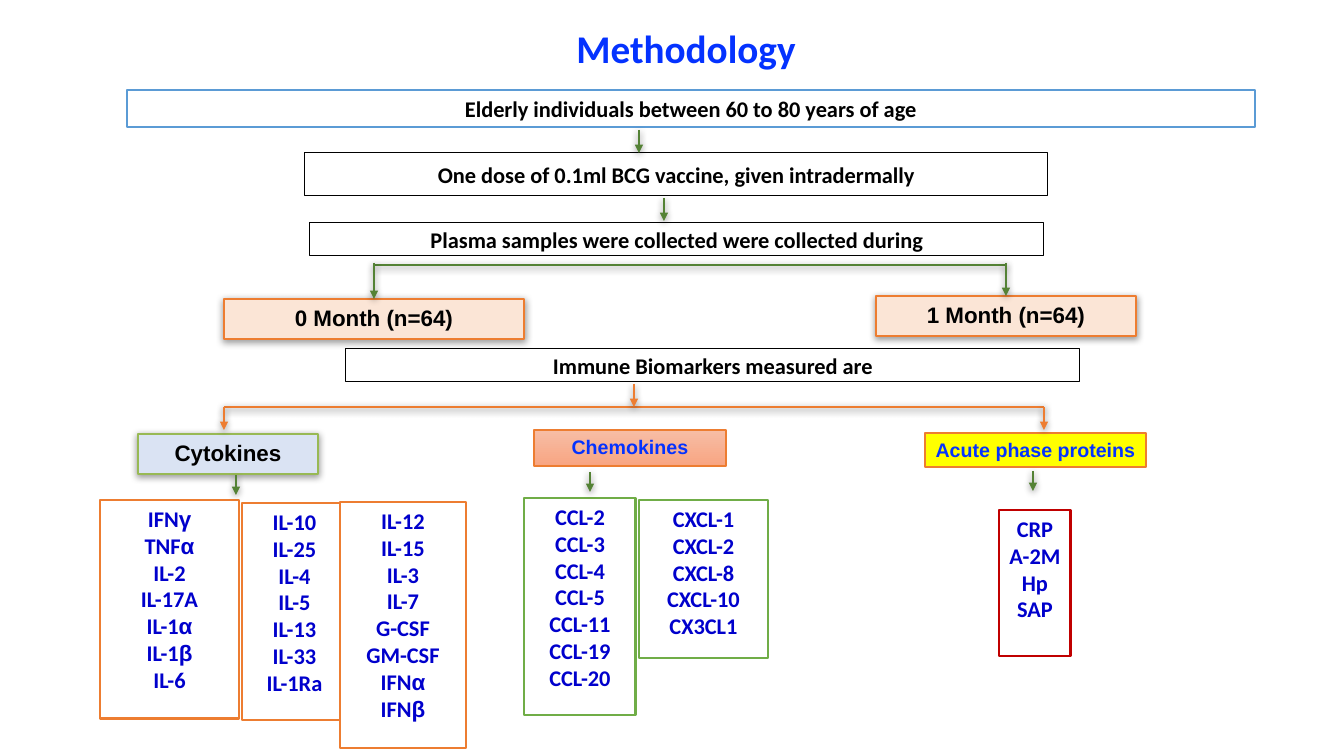
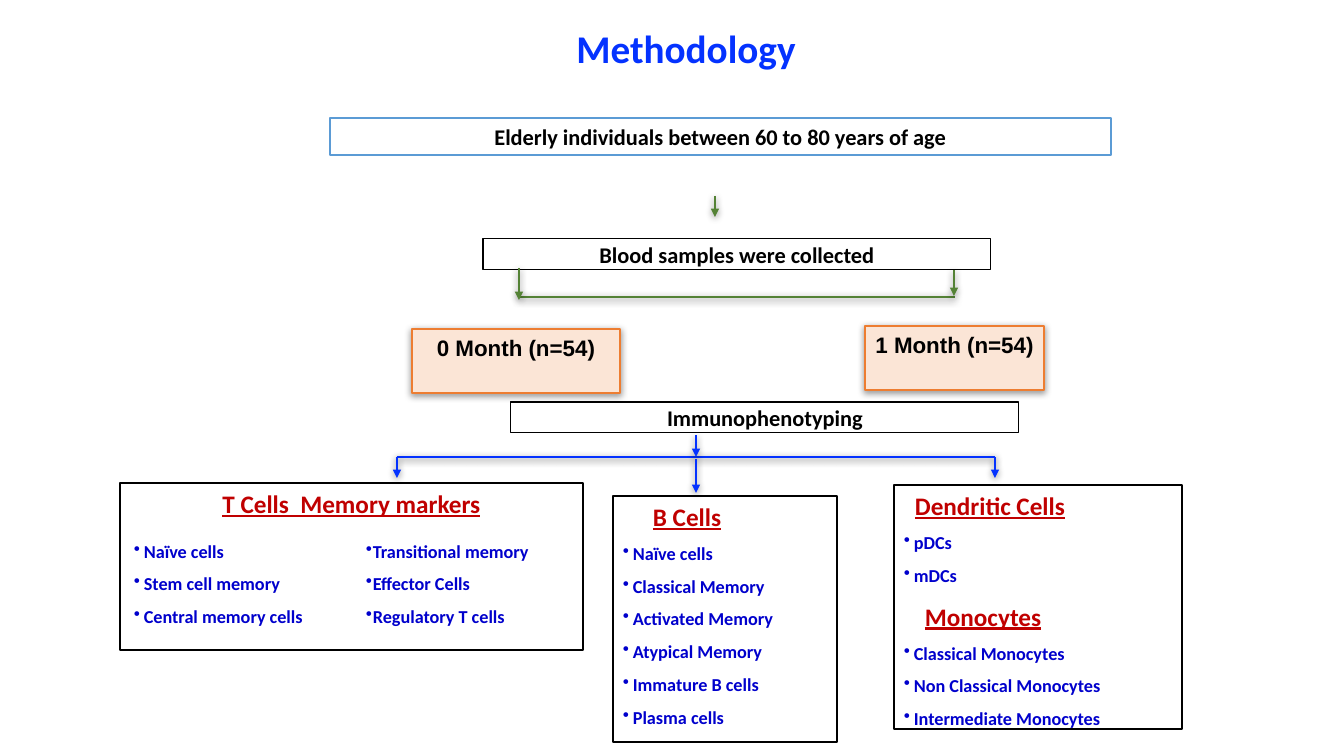
"""Build two methodology flow chart slides for a vaccine study."""
from dataclasses import dataclass
from itertools import groupby

from lxml import etree
from pptx import Presentation
from pptx.dml.color import RGBColor
from pptx.enum.shapes import MSO_CONNECTOR, MSO_SHAPE
from pptx.enum.text import MSO_ANCHOR, PP_ALIGN
from pptx.oxml.ns import qn
from pptx.util import Emu, Pt

RECTANGLE = MSO_SHAPE.RECTANGLE
STRAIGHT = MSO_CONNECTOR.STRAIGHT
TOP, MIDDLE = MSO_ANCHOR.TOP, MSO_ANCHOR.MIDDLE
CENTER, LEFT = PP_ALIGN.CENTER, PP_ALIGN.LEFT
SCALE = 914400 / 100.8
TOP_SIDE = 0


@dataclass(frozen=True)
class Theme:
    black: str = "000000"
    white: str = "FFFFFF"
    blue: str = "0432FF"
    navy: str = "0000CC"
    red: str = "C00000"
    sky: str = "5B9BD5"
    orange: str = "ED7D31"
    peach: str = "FBE5D6"
    green: str = "70AD47"
    dark_green: str = "548235"
    olive: str = "98B954"
    pale_blue: str = "DAE3F3"
    yellow: str = "FFFF00"
    salmon: tuple = ("F7BDA5", "F8A582")
    body: str = "Calibri"
    label: str = "Arial"
    title_size: int = 28
    heading_size: int = 18
    text_size: int = 16
    label_size: int = 14
    bullet_size: int = 13


theme = Theme()


def add_box(page, place, text, *, fill=None, line=None, weight=1, font=theme.body,
            size=theme.text_size, color=theme.black, anchor=TOP, shadow=False,
            spacing=None, bullet=0, headings=None):
    left, top, width, height = (Emu(round(value * SCALE)) for value in place)
    if line:
        box = page.shapes.add_shape(RECTANGLE, left, top, width, height)
        box.shadow.inherit = False
        box.line.color.rgb = RGBColor.from_string(line)
        box.line.width = Pt(weight)
        if isinstance(fill, tuple):
            box.fill.gradient()
            box.fill.gradient_angle = 270
            for stop, shade in zip(box.fill.gradient_stops, fill):
                stop.color.rgb = RGBColor.from_string(shade)
        elif fill:
            box.fill.solid()
            box.fill.fore_color.rgb = RGBColor.from_string(fill)
        else:
            box.fill.background()
    else:
        box = page.shapes.add_textbox(left, top, width, height)
    if shadow:
        effects = box.element.spPr.find(qn("a:effectLst"))
        outer = etree.SubElement(effects, qn("a:outerShdw"), blurRad="63500",
                                 dist="20320", dir="5400000", rotWithShape="0")
        shade = etree.SubElement(outer, qn("a:srgbClr"), val=theme.black)
        etree.SubElement(shade, qn("a:alpha"), val="38000")
    frame = box.text_frame
    frame.word_wrap = bool(bullet)
    frame.vertical_anchor = anchor
    for index, words in enumerate(text.split("\n")):
        para = frame.paragraphs[0] if index == 0 else frame.add_paragraph()
        para.alignment = LEFT if bullet else CENTER
        heading = words in (headings or {})
        properties = para._p.get_or_add_pPr()
        if heading:
            properties.set("marL", str(round(headings[words] * SCALE)))
        elif bullet:
            properties.set("marL", str(round(bullet * SCALE)))
            properties.set("indent", str(-round(bullet * SCALE)))
            etree.SubElement(properties, qn("a:buChar"), char="•")
        if spacing and not (heading and index == 0):
            para.line_spacing = spacing
        for greek, letters in groupby(words, key=lambda letter: letter in "αβγ"):
            span = para.add_run()
            span.text = "".join(letters)
            span.font.name = theme.label if greek else font
            span.font.size = Pt(theme.heading_size if heading else size)
            span.font.bold = True
            span.font.underline = True if heading else None
            span.font.color.rgb = RGBColor.from_string(theme.red if heading else color)
    return box


def add_line(page, ends, color, arrow=True, target=None):
    connector = page.shapes.add_connector(
        STRAIGHT, *(Emu(round(value * SCALE)) for value in ends))
    if target is not None:
        connector.end_connect(target, TOP_SIDE)
    connector.line.color.rgb = RGBColor.from_string(color)
    connector.line.width = Pt(2)
    if arrow:
        etree.SubElement(connector.line._get_or_add_ln(), qn("a:tailEnd"), type="triangle")
    effects = etree.SubElement(connector._element.spPr, qn("a:effectLst"))
    outer = etree.SubElement(effects, qn("a:outerShdw"), blurRad="63500",
                             dist="20320", dir="5400000", rotWithShape="0")
    shade = etree.SubElement(outer, qn("a:srgbClr"), val=theme.black)
    etree.SubElement(shade, qn("a:alpha"), val="38000")


deck = Presentation()
deck.slide_width = Emu(round(1344 * SCALE))
deck.slide_height = Emu(round(756 * SCALE))
biomarker_page, cell_page = (deck.slides.add_slide(deck.slide_layouts[6]) for _ in range(2))

cohort_places = [(biomarker_page, (127, 90, 1128, 37)), (cell_page, (330, 118, 781, 37))]
for page, place in cohort_places:
    add_box(page, (91, 10, 1190, 64), "Methodology", size=theme.title_size,
            color=theme.blue, spacing=1.2)
    add_box(page, place, "Elderly individuals between 60 to 80 years of age",
            fill=theme.white, line=theme.sky)

steps = [
    (biomarker_page, (305, 153, 743, 43), "One dose of 0.1ml BCG vaccine, given intradermally"),
    (biomarker_page, (310, 223, 734, 33), "Plasma samples were collected were collected during"),
    (biomarker_page, (346, 349, 734, 33), "Immune Biomarkers measured are"),
    (cell_page, (483, 239, 508, 31), "Blood samples were collected"),
    (cell_page, (511, 402, 508, 31), "Immunophenotyping"),
]
for page, place, text in steps:
    add_box(page, place, text, line=theme.black, weight=0.75, anchor=MIDDLE)

visits = [
    (biomarker_page, (224, 299, 300, 40), "0 Month (n=64)"),
    (biomarker_page, (876, 296, 260, 40), "1 Month (n=64)"),
    (cell_page, (412, 329, 208, 64), "0 Month (n=54)"),
    (cell_page, (865, 326, 179, 64), "1 Month (n=54)"),
]
visit_boxes = [
    add_box(page, place, text, fill=theme.peach, line=theme.orange, weight=2,
            font=theme.label, shadow=True)
    for page, place, text in visits
]

add_box(biomarker_page, (138, 434, 180, 40), "Cytokines", fill=theme.pale_blue,
        line=theme.olive, weight=1.75, font=theme.label, shadow=True)
classes = [
    ((534, 430, 192, 36), "Chemokines", theme.salmon),
    ((925, 433, 221, 34), "Acute phase proteins", theme.yellow),
]
for place, text, fill in classes:
    add_box(biomarker_page, place, text, fill=fill, line=theme.orange, weight=1.75,
            font=theme.label, size=theme.label_size, color=theme.blue)

markers = [
    ((100, 500, 139, 219), theme.orange, "IFNγ\nTNFα\nIL-2\nIL-17A\nIL-1α\nIL-1β\nIL-6"),
    ((242, 503, 105, 217), theme.orange, "IL-10\nIL-25\nIL-4\nIL-5\nIL-13\nIL-33\nIL-1Ra"),
    ((340, 502, 126, 246), theme.orange,
     "IL-12\nIL-15\nIL-3\nIL-7\nG-CSF\nGM-CSF\nIFNα\nIFNβ"),
    ((524, 498, 112, 217), theme.green,
     "CCL-2\nCCL-3\nCCL-4\nCCL-5\nCCL-11\nCCL-19\nCCL-20"),
    ((639, 500, 129, 158), theme.green, "CXCL-1\nCXCL-2\nCXCL-8\nCXCL-10\nCX3CL1"),
    ((999, 510, 72, 146), theme.red, "CRP\nA-2M\nHp\nSAP"),
]
for place, line, text in markers:
    add_box(biomarker_page, place, text, fill=theme.white, line=line, weight=2,
            color=theme.navy)

t_cells = "T Cells  Memory markers"
add_box(cell_page, (120, 483, 463, 167), t_cells, fill=theme.white, line=theme.black,
        headings={t_cells: 0})
cell_lists = [
    ((613, 496, 224, 246), theme.black, 10, {"B Cells": 30},
     "B Cells\nNaïve cells\nClassical Memory\nActivated Memory\nAtypical Memory\n"
     "Immature B cells\nPlasma cells"),
    ((894, 485, 288, 244), theme.black, 10, {"Dendritic Cells": 11, "Monocytes": 21},
     "Dendritic Cells\npDCs\nmDCs\nMonocytes\nClassical Monocytes\n"
     "Non Classical Monocytes\nIntermediate Monocytes"),
    ((124, 524, 220, 112), None, 10, None,
     "Naïve cells\nStem cell memory\nCentral memory cells"),
    ((356, 524, 220, 112), None, 7, None,
     "Transitional memory\nEffector Cells\nRegulatory T cells"),
]
for place, line, bullet, headings, text in cell_lists:
    add_box(cell_page, place, text, fill=theme.white, line=line, size=theme.bullet_size,
            color=theme.navy, spacing=1.5, bullet=bullet, headings=headings)

bars = [
    (biomarker_page, (374, 265, 1006, 265), theme.dark_green),
    (biomarker_page, (224, 407, 1044, 407), theme.orange),
    (cell_page, (519, 297, 955, 297), theme.dark_green),
    (cell_page, (397, 457, 995, 457), theme.blue),
]
for page, ends, color in bars:
    add_line(page, ends, color, arrow=False)

for x, visit_box in zip((374, 1006), visit_boxes):
    add_line(biomarker_page, (x, 263, x, 296), theme.dark_green, target=visit_box)

arrows = [
    (biomarker_page, theme.dark_green,
     [(639, 130, 153), (664, 198, 221), (236, 475, 495), (590, 472, 492), (1033, 471, 491)]),
    (biomarker_page, theme.orange, [(634, 384, 407), (224, 407, 430), (1044, 407, 430)]),
    (cell_page, theme.dark_green, [(715, 196, 217), (519, 268, 300), (954, 270, 296)]),
    (cell_page, theme.blue,
     [(696, 435, 457), (397, 457, 478), (995, 457, 478), (696, 459, 493)]),
]
for page, color, drops in arrows:
    for x, start, end in drops:
        add_line(page, (x, start, x, end), color)

deck.save("out.pptx")
